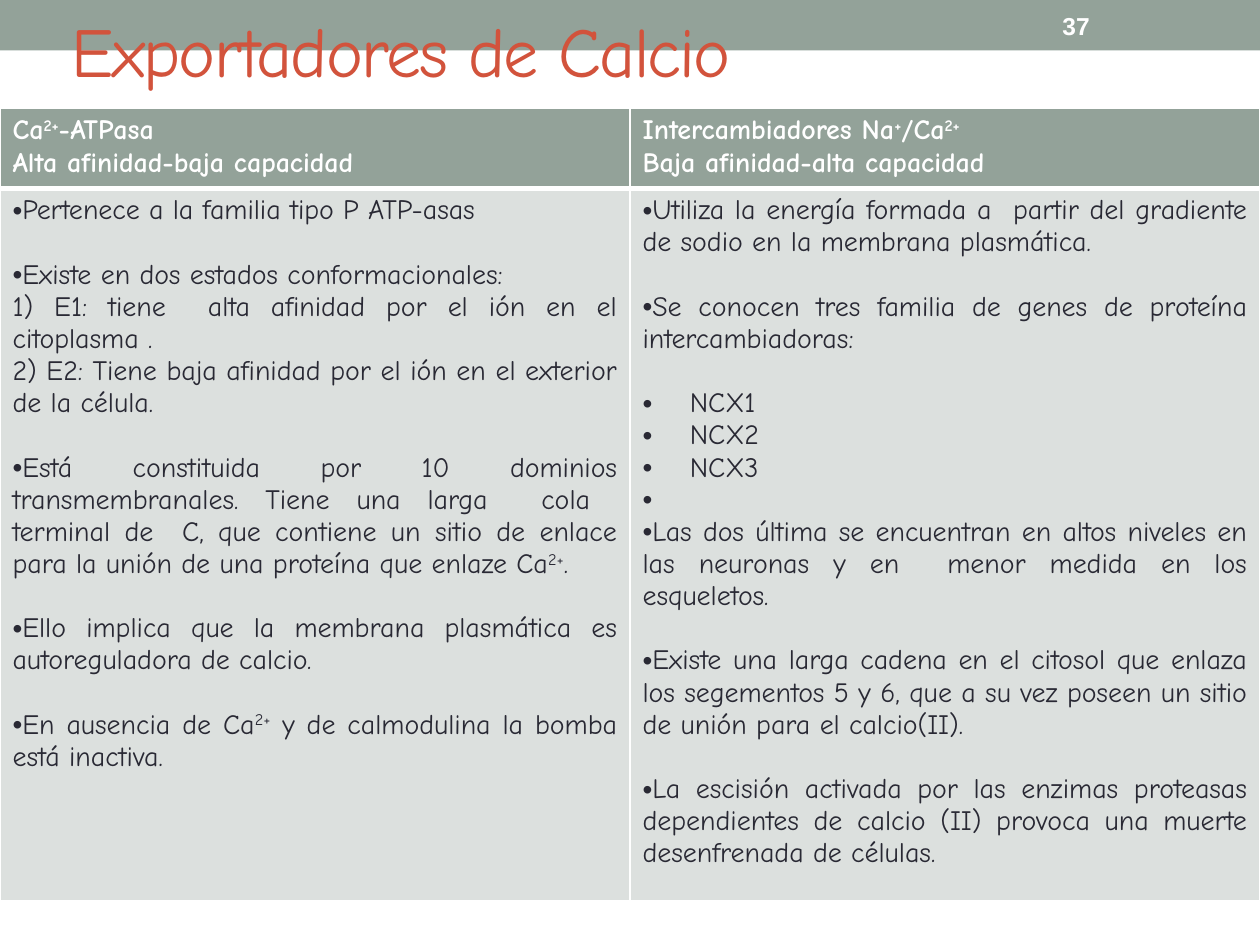
from lxml.etree import SubElement
from pptx import Presentation
from pptx.dml.color import RGBColor
from pptx.enum.shapes import MSO_SHAPE
from pptx.enum.text import MSO_ANCHOR, PP_ALIGN
from pptx.oxml.ns import qn
from pptx.util import Pt

TITLE = "Exportadores de Calcio"
PAGE_NUMBER = "37"
HEADERS = [
    ["Ca^2+^-ATPasa", "Alta afinidad-baja capacidad"],
    ["Intercambiadores Na^+^/Ca^2+^", "Baja afinidad-alta capacidad"],
]
POINT, SPACED, PLAIN, ITEM = (
    dict(bullet=True),
    dict(bullet=True, before=18.4),
    dict(),
    dict(bullet=True, indent=27),
)
BODIES = [
    [
        ("Pertenece a la familia tipo P ATP-asas", POINT),
        ("Existe en dos estados conformacionales:", SPACED),
        ("1) E1: tiene  alta afinidad por el ión en el citoplasma .", PLAIN),
        ("2) E2: Tiene baja afinidad por el ión en el exterior de la célula.", PLAIN),
        ("Está constituida por 10 dominios transmembranales. Tiene una larga  cola  "
         "terminal de  C, que contiene un sitio de enlace para la unión de una "
         "proteína que enlaze Ca^2+^.", SPACED),
        ("Ello implica que la membrana plasmática es autoreguladora de calcio.", SPACED),
        ("En ausencia de Ca^2+^ y de calmodulina la bomba está inactiva.", SPACED),
    ],
    [
        ("Utiliza la energía formada a  partir del gradiente de sodio en la "
         "membrana plasmática.", POINT),
        ("Se conocen tres familia de genes de proteína intercambiadoras:", SPACED),
        ("NCX1", dict(ITEM, before=18.4)),
        ("NCX2", ITEM),
        ("NCX3", ITEM),
        (" ", POINT),
        ("Las dos última se encuentran en altos niveles en las neuronas y en  menor "
         "medida en los esqueletos.", POINT),
        ("Existe una larga cadena en el citosol que enlaza los segementos 5 y 6, que a "
         "su vez poseen un sitio de unión para el calcio(II).", SPACED),
        ("La escisión activada por las enzimas proteasas dependientes de calcio (II) "
         "provoca una muerte desenfrenada de células.", SPACED),
    ],
]
SAGE, PALE, WHITE, INK, RUST = "93A299", "DCE0DE", "FFFFFF", "292934", "D2533C"
WIDTH, HEIGHT = 720, 540
TABLE_TOP, ROW_HEIGHTS = 62, [45.4, 394]


def color(value):
    return RGBColor.from_string(value)


def write(paragraph, text, size=16, font="Comic Neue", ink=INK, bold=False,
          align=PP_ALIGN.LEFT, bullet=False, indent=0, before=0, spacing=0):
    paragraph.alignment = align
    paragraph.space_before = Pt(before)
    properties = paragraph._p.get_or_add_pPr()
    properties.set("marL", str(Pt(indent)))
    properties.set("indent", str(Pt(-indent)))
    if bullet:
        SubElement(properties, qn("a:buFont")).set("typeface", "Arial")
        SubElement(properties, qn("a:buChar")).set("char", "•")
    else:
        SubElement(properties, qn("a:buNone"))
    for index, part in enumerate(text.split("^")):
        if not part:
            continue
        run = paragraph.add_run()
        run.text = part
        run.font.size = Pt(size)
        run.font.name = font
        run.font.bold = bold
        run.font.color.rgb = color(ink)
        run_properties = run._r.get_or_add_rPr()
        if index % 2:
            run_properties.set("baseline", "30000")
        if spacing:
            run_properties.set("spc", str(round(spacing * 100)))


def add_label(slide, box, text, **text_format):
    label = slide.shapes.add_textbox(*map(Pt, box)).text_frame
    label.word_wrap = True
    label.vertical_anchor = MSO_ANCHOR.MIDDLE
    write(label.paragraphs[0], text, **text_format)


def style_cell(cell, fill, top, bottom):
    properties = cell._tc.get_or_add_tcPr()
    for side, width in (("L", 1), ("R", 1), ("T", top), ("B", bottom)):
        border = SubElement(properties, qn(f"a:ln{side}"), w=str(Pt(width)))
        SubElement(SubElement(border, qn("a:solidFill")), qn("a:srgbClr"), val=WHITE)
    cell.fill.solid()
    cell.fill.fore_color.rgb = color(fill)


def fill_cell(cell, entries, **text_format):
    frame = cell.text_frame
    for index, (text, extra) in enumerate(entries):
        paragraph = frame.add_paragraph() if index else frame.paragraphs[0]
        write(paragraph, text, **text_format, **extra)


def add_comparison(slide):
    table = slide.shapes.add_table(
        2, len(HEADERS), Pt(0), Pt(TABLE_TOP), Pt(WIDTH), Pt(sum(ROW_HEIGHTS))).table
    for row, height in zip(table.rows, ROW_HEIGHTS):
        row.height = Pt(height)
    for column, (header, body) in enumerate(zip(HEADERS, BODIES)):
        header_cell, body_cell = table.cell(0, column), table.cell(1, column)
        style_cell(header_cell, SAGE, top=1, bottom=3)
        style_cell(body_cell, PALE, top=3, bottom=1)
        fill_cell(header_cell, [(line, PLAIN) for line in header], ink=WHITE, bold=True)
        fill_cell(body_cell, body, align=PP_ALIGN.JUSTIFY)


def main():
    presentation = Presentation()
    presentation.slide_width, presentation.slide_height = Pt(WIDTH), Pt(HEIGHT)
    slide = presentation.slides.add_slide(presentation.slide_layouts[6])
    band = slide.shapes.add_shape(MSO_SHAPE.RECTANGLE, 0, 0, Pt(WIDTH), Pt(28.8))
    band.shadow.inherit = False
    band.fill.solid()
    band.fill.fore_color.rgb = color(SAGE)
    band.line.fill.background()
    add_label(slide, (34, -16.5, 648, 90), TITLE, size=40, ink=RUST, spacing=-1)
    add_comparison(slide)
    add_label(slide, (600, 1.5, 84, 26), PAGE_NUMBER,
              size=14, font="Arial", ink=WHITE, bold=True)
    presentation.save("out.pptx")


if __name__ == "__main__":
    main()
